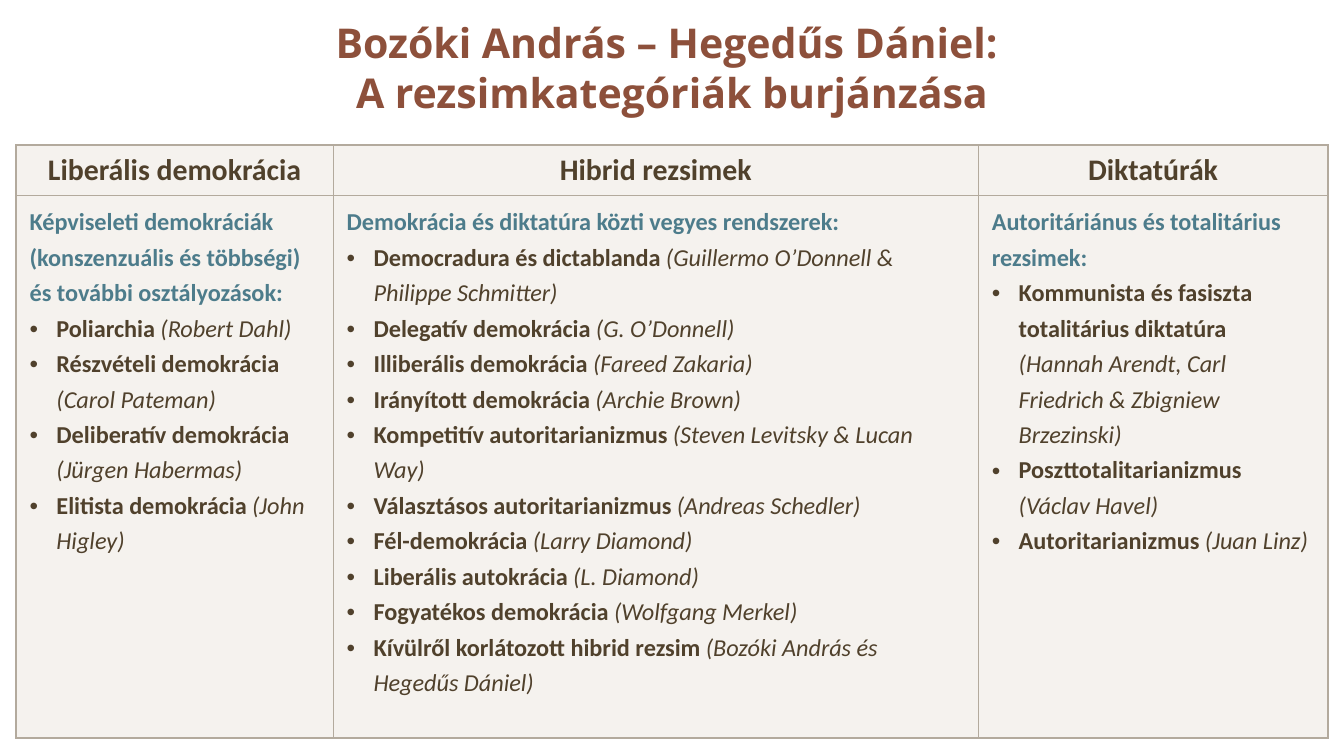
import pptx
import pptx.dml.color
import pptx.enum.text
import pptx.oxml
import pptx.oxml.ns
import pptx.util
from lxml import etree

Inches = pptx.util.Inches
Pt = pptx.util.Pt
RGBColor = pptx.dml.color.RGBColor
PP_ALIGN = pptx.enum.text.PP_ALIGN
qn = pptx.oxml.ns.qn

RUST = RGBColor(0x8D, 0x50, 0x3B)
BROWN = RGBColor(0x50, 0x41, 0x2C)
TEAL = RGBColor(0x4D, 0x7C, 0x8B)
SAND = RGBColor(0xB3, 0xAA, 0x9D)
CREAM = RGBColor(0xEF, 0xEA, 0xE4)

COL_WIDTHS = [2.36, 4.8, 2.6]
ROW_HEIGHTS = [0.37, 4.04]

# Each column: heading, introduction, (regime, authors) items
COLUMNS = [
    ("Liberális demokrácia",
     "Képviseleti demokráciák (konszenzuális és többségi) és további osztályozások:",
     [("Poliarchia", "Robert Dahl"),
      ("Részvételi demokrácia", "Carol Pateman"),
      ("Deliberatív demokrácia", "Jürgen Habermas"),
      ("Elitista demokrácia", "John Higley")]),
    ("Hibrid rezsimek",
     "Demokrácia és diktatúra közti vegyes rendszerek:",
     [("Democradura és dictablanda", "Guillermo O’Donnell & Philippe Schmitter"),
      ("Delegatív demokrácia", "G. O’Donnell"),
      ("Illiberális demokrácia", "Fareed Zakaria"),
      ("Irányított demokrácia", "Archie Brown"),
      ("Kompetitív autoritarianizmus", "Steven Levitsky & Lucan Way"),
      ("Választásos autoritarianizmus", "Andreas Schedler"),
      ("Fél-demokrácia", "Larry Diamond"),
      ("Liberális autokrácia", "L. Diamond"),
      ("Fogyatékos demokrácia", "Wolfgang Merkel"),
      ("Kívülről korlátozott hibrid rezsim", "Bozóki András és Hegedűs Dániel")]),
    ("Diktatúrák",
     "Autoritáriánus és totalitárius rezsimek:",
     [("Kommunista és fasiszta totalitárius diktatúra",
       "Hannah Arendt, Carl Friedrich & Zbigniew Brzezinski"),
      ("Poszttotalitarianizmus", "Václav Havel"),
      ("Autoritarianizmus", "Juan Linz")]),
]


def add_text(p, text, size=13, font="Calibri", color=BROWN, bold=True, italic=False):
    r = p.add_run()
    r.text = text
    r.font.size, r.font.name = Pt(size), font
    r.font.bold, r.font.italic = bold, italic
    r.font.color.rgb = color


def add_bullet(p, indent=0.2):
    pPr = p._p.get_or_add_pPr()
    pPr.set("marL", str(Inches(indent)))
    pPr.set("indent", str(-Inches(indent)))
    etree.SubElement(pPr, qn("a:buFont")).set("typeface", "Arial")
    etree.SubElement(pPr, qn("a:buChar")).set("char", "•")


def style_cell(cell, widths):
    """Fill the cell and draw its borders; widths are left, right, top, bottom."""
    cell.fill.solid()
    cell.fill.fore_color.rgb = CREAM
    tcPr = cell._tc.get_or_add_tcPr()
    color = tcPr.find(qn("a:solidFill")).find(qn("a:srgbClr"))
    etree.SubElement(color, qn("a:alpha")).set("val", "60000")
    # Borders come before the fill
    for i, (side, width) in enumerate(zip("LRTB", widths)):
        ln = etree.Element(qn("a:ln" + side), w=str(Pt(width)))
        fill = etree.SubElement(ln, qn("a:solidFill"))
        etree.SubElement(fill, qn("a:srgbClr")).set("val", str(SAND))
        tcPr.insert(i, ln)


def fill_body(tf, intro, items):
    p = tf.paragraphs[0]
    p.line_spacing = 1.2
    add_text(p, intro, color=TEAL)
    for regime, authors in items:
        p = tf.add_paragraph()
        add_bullet(p)
        p.line_spacing = 1.2
        add_text(p, regime + " ")
        add_text(p, f"({authors})", bold=False, italic=True)


def add_title(s, left, top, width, height):
    sp = s.shapes.title
    sp.left, sp.top = Inches(left), Inches(top)
    sp.width, sp.height = Inches(width), Inches(height)
    tf = sp.text_frame
    tf.auto_size = pptx.enum.text.MSO_AUTO_SIZE.NONE
    tf.vertical_anchor = pptx.enum.text.MSO_ANCHOR.MIDDLE
    p = tf.paragraphs[0]
    p.alignment = PP_ALIGN.CENTER
    title_format = dict(size=22, font="Open Sans", color=RUST)
    add_text(p, "Bozóki András – Hegedűs Dániel: ", **title_format)
    p.add_line_break()
    add_text(p, "A rezsimkategóriák burjánzása", **title_format)


def add_regime_table(s, left, top, width, height):
    rows, cols = len(ROW_HEIGHTS), len(COLUMNS)
    table = s.shapes.add_table(rows, cols, Inches(left), Inches(top),
                               Inches(width), Inches(height)).table
    table.first_row = table.horz_banding = False
    for row, h in zip(table.rows, ROW_HEIGHTS):
        row.height = Inches(h)
    for c, (heading, intro, items) in enumerate(COLUMNS):
        table.columns[c].width = Inches(COL_WIDTHS[c])
        # Header cell
        p = table.cell(0, c).text_frame.paragraphs[0]
        p.alignment = PP_ALIGN.CENTER
        add_text(p, heading, size=16)
        # Body cell
        fill_body(table.cell(1, c).text_frame, intro, items)
        # Outer borders are thicker than inner ones
        for r in range(rows):
            outer = (c == 0, c == cols - 1, r == 0, r == rows - 1)
            style_cell(table.cell(r, c), [1 if edge else 0.5 for edge in outer])


def main():
    prs = pptx.Presentation()
    # Widescreen, 16:9
    prs.slide_width = Inches(10)
    prs.slide_height = prs.slide_width * 9 // 16
    s = prs.slides.add_slide(prs.slide_layouts[5])
    add_title(s, 0.12, 0, 9.76, 1)
    add_regime_table(s, 0.12, 1.08, sum(COL_WIDTHS), sum(ROW_HEIGHTS))
    prs.save("out.pptx")


if __name__ == "__main__":
    main()
